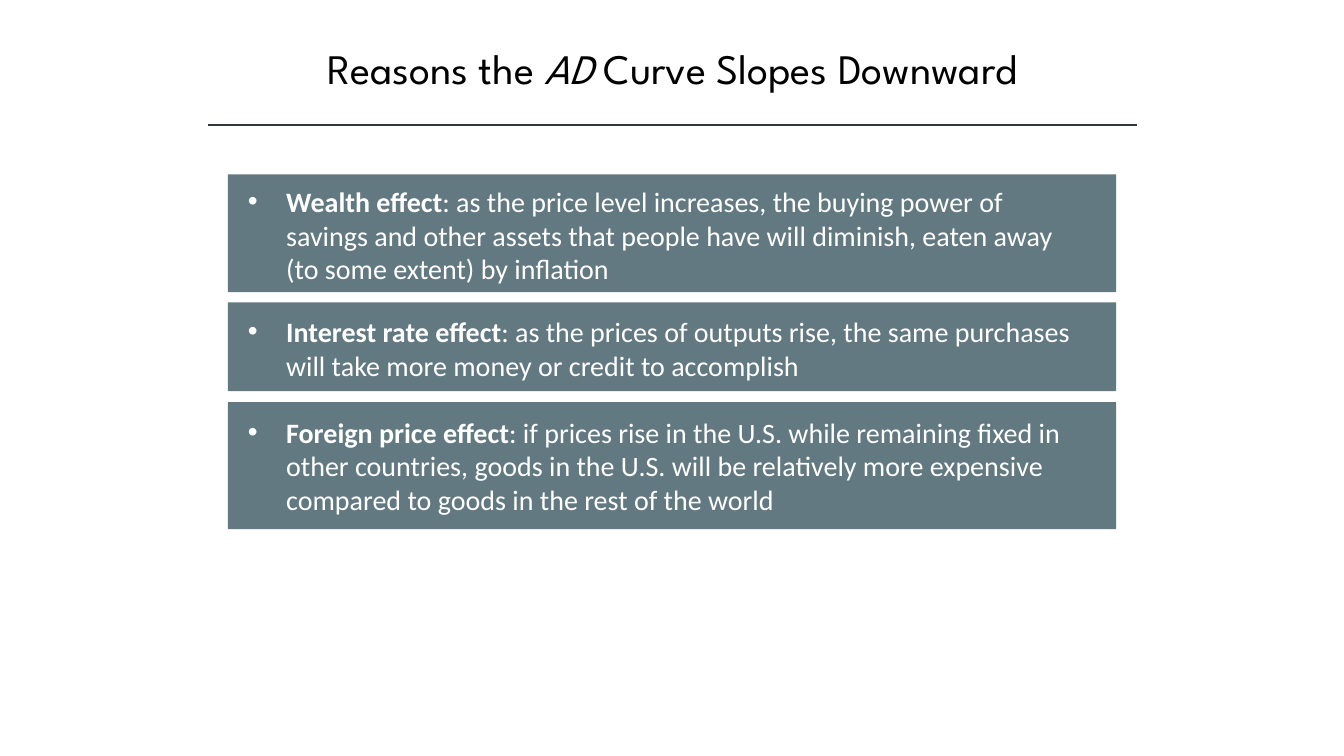
from lxml import etree
from pptx import Presentation
from pptx.dml.color import RGBColor
from pptx.enum.shapes import MSO_CONNECTOR, MSO_SHAPE
from pptx.enum.text import MSO_ANCHOR, PP_ALIGN
from pptx.oxml.ns import qn
from pptx.util import Inches, Pt

EFFECTS = [
    # top and height of the panel, top and height of its text, name, explanation
    (1.73, 1.17, 1.78, 1.11, "Wealth effect",
     ": as the price level increases, the buying power of savings and other assets "
     "that people have will diminish, eaten away (to some extent) by inflation"),
    (3.0, 0.88, 3.07, 0.77, "Interest rate effect",
     ": as the prices of outputs rise, the same purchases will take more money or "
     "credit to accomplish"),
    (3.99, 1.26, 4.07, 1.11, "Foreign price effect",
     ": if prices rise in the U.S. while remaining fixed in other countries, goods in "
     "the U.S. will be relatively more expensive compared to goods in the rest of the world"),
]


def rgb(value):
    return RGBColor.from_string(value)


def add_run(p, text, font="Calibri", size=20, color="FFFFFF", bold=False, italic=False):
    r = p.add_run()
    r.text = text
    r.font.name, r.font.size = font, Pt(size)
    r.font.bold, r.font.italic = bold, italic
    r.font.color.rgb = rgb(color)


def add_bullet(p, indent):
    """Give the paragraph a hanging round bullet."""
    pPr = p._p.get_or_add_pPr()
    pPr.set("marL", str(Inches(indent)))
    pPr.set("indent", str(-Inches(indent)))
    etree.SubElement(pPr, qn("a:buFont")).set("typeface", "Arial")
    etree.SubElement(pPr, qn("a:buChar")).set("char", "•")


class EffectsSlide:
    title_font = "League Spartan"
    panel_color = "627981"
    rule_color = "323542"

    def __init__(self, prs):
        self.shapes = prs.slides.add_slide(prs.slide_layouts[6]).shapes

    def title(self, parts, left, top, width, height):
        """Write the title from (text, italic) parts."""
        tf = self.shapes.add_textbox(
            Inches(left), Inches(top), Inches(width), Inches(height)).text_frame
        tf.word_wrap = True
        p = tf.paragraphs[0]
        p.alignment = PP_ALIGN.CENTER
        for text, italic in parts:
            add_run(p, text, font=self.title_font, size=30, color="000000", italic=italic)

    def rule(self, x1, x2, y):
        line = self.shapes.add_connector(
            MSO_CONNECTOR.STRAIGHT, Inches(x1), Inches(y), Inches(x2), Inches(y))
        line.line.color.rgb = rgb(self.rule_color)
        line.line.width = Pt(1)
        etree.SubElement(line._element.spPr, qn("a:effectLst"))

    def rect(self, group, left, top, width, height):
        sp = group.shapes.add_shape(
            MSO_SHAPE.RECTANGLE, Inches(left), Inches(top), Inches(width), Inches(height))
        sp.shadow.inherit = False
        sp.fill.solid()
        sp.fill.fore_color.rgb = rgb(self.panel_color)
        sp.line.fill.background()
        return sp

    def effect(self, top, height, text_top, text_height, name, explanation):
        group = self.shapes.add_group_shape()
        self.rect(group, 2.26, top, 8.81, height)
        tf = self.rect(group, 2.36, text_top, 8.54, text_height).text_frame
        tf.word_wrap = True
        tf.vertical_anchor = MSO_ANCHOR.TOP
        p = tf.paragraphs[0]
        p.alignment = PP_ALIGN.LEFT
        add_bullet(p, 0.38)
        add_run(p, name, bold=True)
        add_run(p, explanation)


def main():
    prs = Presentation()
    prs.slide_width, prs.slide_height = Inches(13.33), Inches(7.5)
    s = EffectsSlide(prs)
    s.title([("Reasons the ", False), ("AD", True), (" Curve Slopes Downward", False)],
            1.67, 0.37, 10, 0.61)
    s.rule(2.06, 11.28, 1.24)
    for effect in EFFECTS:
        s.effect(*effect)
    prs.save("out.pptx")


if __name__ == "__main__":
    main()
